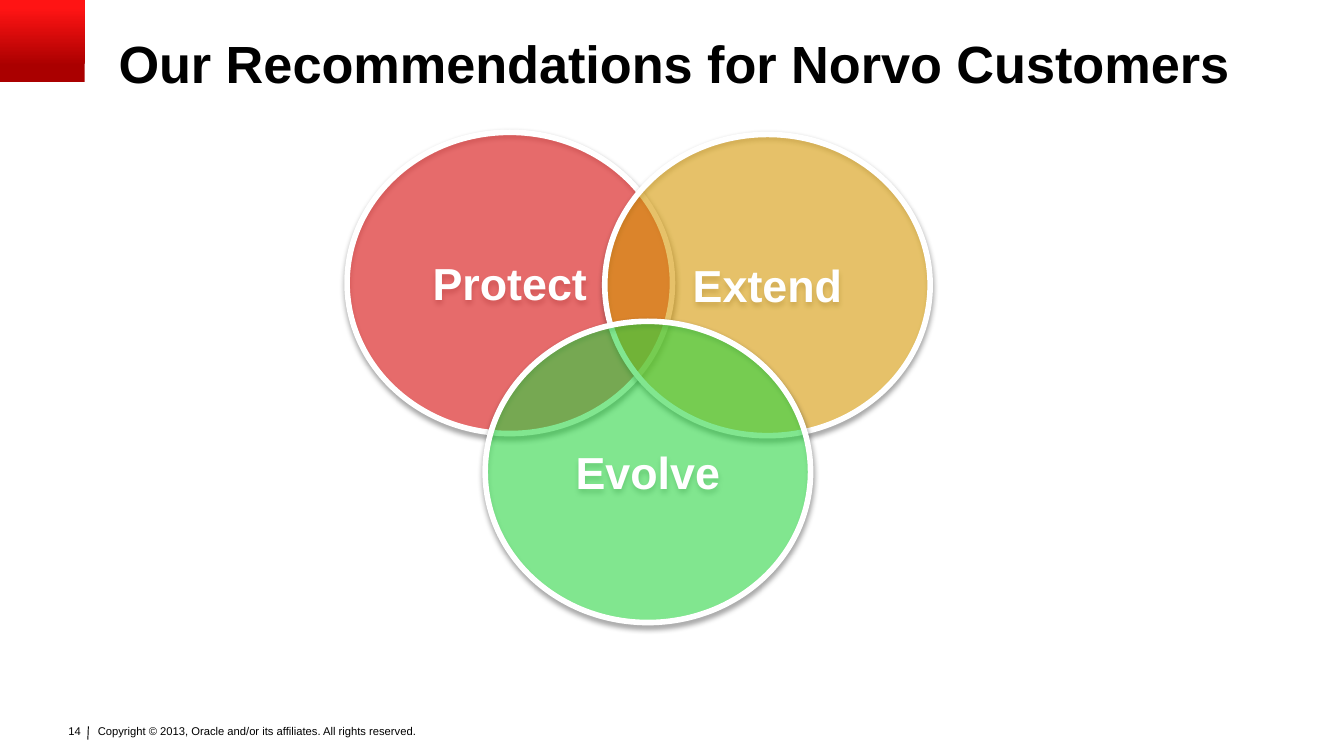
import pptx
import pptx.util
import pptx.dml.color
import pptx.enum.shapes
import pptx.enum.text
import lxml.etree
import pptx.oxml.ns

Cm, Pt = pptx.util.Cm, pptx.util.Pt
RGBColor = pptx.dml.color.RGBColor
PP_ALIGN = pptx.enum.text.PP_ALIGN
MSO_ANCHOR = pptx.enum.text.MSO_ANCHOR
MSO_SHAPE = pptx.enum.shapes.MSO_SHAPE
qn = pptx.oxml.ns.qn

BLACK = RGBColor(0x00, 0x00, 0x00)
WHITE = RGBColor(0xFF, 0xFF, 0xFF)
DARK_RED = RGBColor(0xAA, 0x00, 0x00)
RED = RGBColor(0xFF, 0x14, 0x14)
AMBER = RGBColor(0xFF, 0xB5, 0x00)
GREEN = RGBColor(0x31, 0xFF, 0x4E)


def style_text(paragraph, size, color, bold=False):
    for run in paragraph.runs:
        run.font.name = "Arial"
        run.font.size = Pt(size)
        run.font.bold = bold
        run.font.color.rgb = color


prs = pptx.Presentation()
prs.slide_width = Cm(25.4)
prs.slide_height = Cm(14.28)
slide = prs.slides.add_slide(prs.slide_layouts[5])

# Corner block
corner = slide.shapes.add_shape(MSO_SHAPE.RECTANGLE, 0, 0, Cm(1.6), Cm(1.55))
corner.shadow.inherit = False
corner.line.fill.background()
corner.fill.gradient()
corner.fill.gradient_angle = 90
for stop, color, position in zip(corner.fill.gradient_stops, (DARK_RED, RED), (0.2, 0.9)):
    stop.color.rgb = color
    stop.position = position

# Title
title = slide.shapes.title
title.left, title.top, title.width, title.height = Cm(2.24), Cm(0.69), Cm(22.86), Cm(1.12)
frame = title.text_frame
frame.text = "Our Recommendations for Norvo Customers"
frame.auto_size = pptx.enum.text.MSO_AUTO_SIZE.NONE
frame.vertical_anchor = MSO_ANCHOR.MIDDLE
frame.margin_left = frame.margin_right = frame.margin_top = frame.margin_bottom = 0
frame.paragraphs[0].alignment = PP_ALIGN.LEFT
frame.paragraphs[0].line_spacing = 0.9
style_text(frame.paragraphs[0], 28, BLACK, bold=True)

# Overlapping circles: label, left, top, colour, opacity in percent
for label, left, top, color, opacity in (
    ("Protect", 6.56, 2.5, RED, 52),
    ("Extend", 11.43, 2.54, AMBER, 49),
    ("Evolve", 9.17, 6.07, GREEN, 49),
):
    circle = slide.shapes.add_shape(MSO_SHAPE.OVAL, Cm(left), Cm(top), Cm(6.15), Cm(5.69))
    circle.fill.solid()
    circle.fill.fore_color.rgb = color
    fill_color = circle.fill._xPr.find(qn("a:solidFill"))[0]
    lxml.etree.SubElement(fill_color, qn("a:alpha"), val=str(opacity * 1000))
    circle.line.color.rgb = WHITE
    circle.line.width = Pt(3)

    # Soft shadow straight below
    circle.shadow.inherit = False
    effects = circle.element.spPr.find(qn("a:effectLst"))
    shadow = lxml.etree.SubElement(
        effects, qn("a:outerShdw"), blurRad=str(Pt(3.1)), dist=str(Pt(1.6)),
        dir="5400000", rotWithShape="0")
    shadow_color = lxml.etree.SubElement(shadow, qn("a:srgbClr"), val=str(BLACK))
    lxml.etree.SubElement(shadow_color, qn("a:alpha"), val="38000")

    circle.text_frame.text = label
    circle.text_frame.vertical_anchor = MSO_ANCHOR.MIDDLE
    circle.text_frame.paragraphs[0].alignment = PP_ALIGN.CENTER
    style_text(circle.text_frame.paragraphs[0], 24, WHITE, bold=True)

# Footer: copyright, divider and page number
copyright_line = slide.shapes.add_textbox(Cm(1.75), Cm(13.64), Cm(6.96), Cm(0.61))
frame = copyright_line.text_frame
frame.word_wrap = True
frame.margin_left = frame.margin_right = Cm(0.1)
frame.margin_top = frame.margin_bottom = Cm(0.05)
frame.text = "Copyright © 2013, Oracle and/or its affiliates. All rights reserved."
style_text(frame.paragraphs[0], 6, BLACK)

divider = slide.shapes.add_connector(
    pptx.enum.shapes.MSO_CONNECTOR.STRAIGHT, Cm(1.67), Cm(13.72), Cm(1.66), Cm(13.97))
divider.line.color.rgb = BLACK
divider.line.width = Pt(0.5)
lxml.etree.SubElement(divider.element.spPr, qn("a:effectLst"))

page_number = slide.shapes.add_textbox(Cm(0.99), Cm(13.56), Cm(0.79), Cm(0.51))
page_number.text_frame.text = "14"
page_number.text_frame.word_wrap = False
page_number.text_frame.paragraphs[0].alignment = PP_ALIGN.RIGHT
style_text(page_number.text_frame.paragraphs[0], 6, BLACK)

prs.save("out.pptx")
